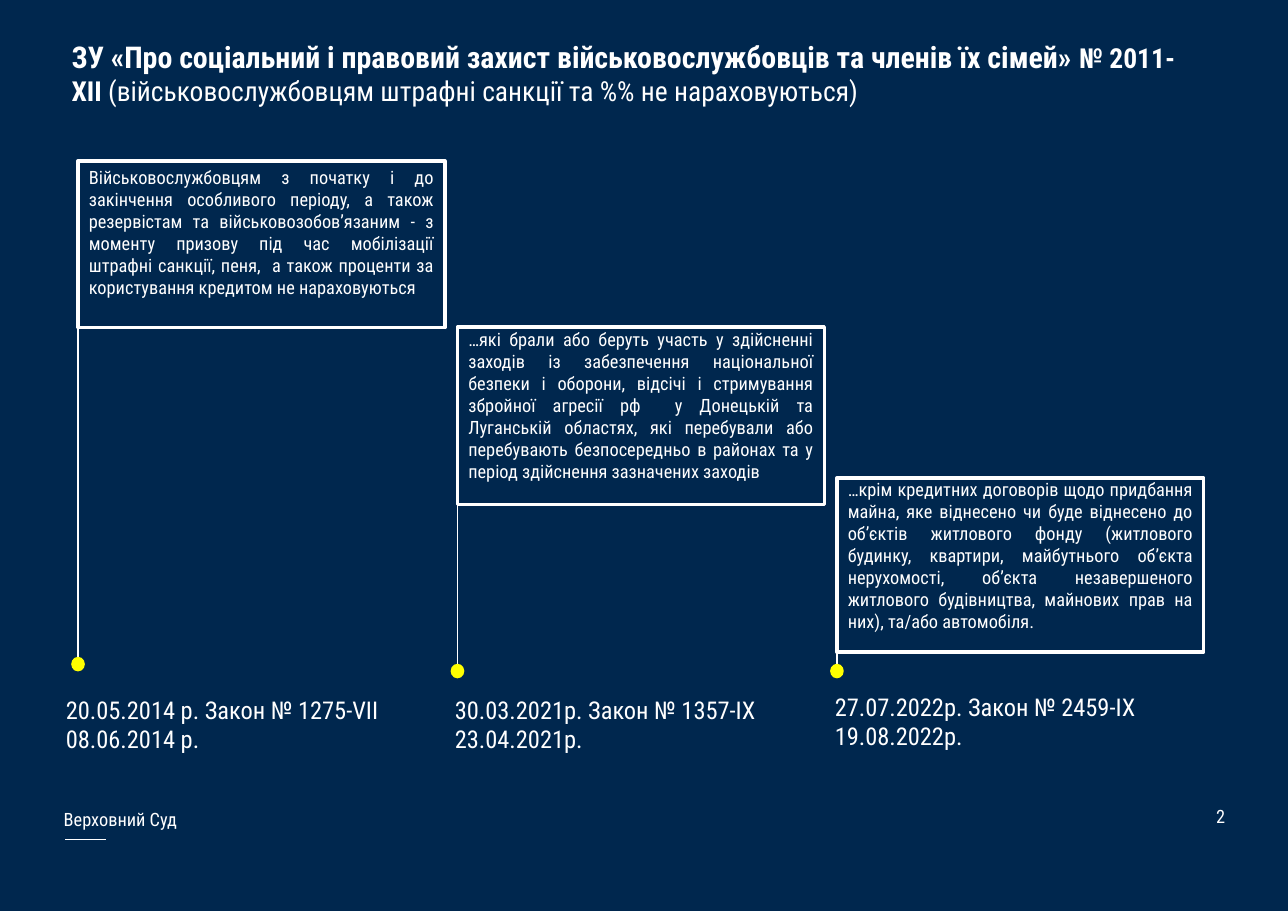
import dataclasses

import pptx
import pptx.util
import pptx.dml.color
import pptx.enum.shapes
import pptx.enum.text
from lxml import etree
from pptx.util import Cm, Pt

SHAPES = pptx.enum.shapes.MSO_SHAPE
ALIGN = pptx.enum.text.PP_ALIGN
ANCHOR = pptx.enum.text.MSO_ANCHOR


@dataclasses.dataclass(frozen=True)
class Theme:
    font: str = "Roboto Condensed"
    navy: str = "00274E"
    white: str = "FFFFFF"
    yellow: str = "FFFF00"
    title: float = 19.6
    title_number: float = 18
    date: float = 16
    body: float = 12


@dataclasses.dataclass(frozen=True)
class Stage:
    """One step of the timeline; lengths in centimetres."""
    top: float
    height: float
    inset_top: float
    dot_top: float
    label_offset: float
    label_top: float
    dates: tuple
    text: str


THEME = Theme()
BOX_LEFT, BOX_PITCH, BOX_WIDTH = 1.8, 8.75, 8.46
DOT_WIDTH, DOT_HEIGHT = 0.28, 0.3

TITLE = [
    ("ЗУ «Про соціальний і правовий захист військовослужбовців та членів їх сімей» ",
     THEME.title, True),
    ("№ 2011-XII ", THEME.title_number, True),
    ("(військовослужбовцям штрафні санкції та %% не нараховуються)",
     THEME.title_number, False),
]

STAGES = [
    Stage(3.71, 3.84, 0.12, 15.16, -0.53, 15.9,
          ("20.05.2014 р. Закон № 1275-VII", "08.06.2014 р."),
          "Військовослужбовцям з початку і до закінчення особливого періоду, "
          "а також резервістам та військовозобов’язаним - з моменту призову "
          "під час мобілізації штрафні санкції, пеня,  а також проценти за "
          "користування кредитом не нараховуються"),
    Stage(7.54, 4.09, 0.02, 15.32, -0.31, 15.9,
          ("30.03.2021р. Закон № 1357-IX", "23.04.2021р."),
          "…які брали або беруть участь у здійсненні заходів із забезпечення "
          "національної безпеки і оборони, відсічі і стримування збройної "
          "агресії рф  у Донецькій та Луганській областях, які перебували або "
          "перебувають безпосередньо в районах та у період здійснення "
          "зазначених заходів"),
    Stage(11.02, 4.01, 0, 15.32, -0.3, 15.82,
          ("27.07.2022р. Закон № 2459-IX", "19.08.2022р."),
          "…крім кредитних договорів щодо придбання майна, яке віднесено чи "
          "буде віднесено до об’єктів житлового фонду (житлового будинку, "
          "квартири, майбутнього об’єкта нерухомості, об’єкта незавершеного "
          "житлового будівництва, майнових прав на них), та/або автомобіля."),
]


def rgb(value):
    return pptx.dml.color.RGBColor.from_string(value)


def set_format(target, values):
    for name, value in values.items():
        setattr(target, name, value)


def write(shape, paragraphs, frame_format=None, paragraph_format=None):
    """Fill a shape with paragraphs, each a list of (text, size, bold) runs."""
    frame = shape.text_frame
    set_format(frame, {"word_wrap": True, "vertical_anchor": ANCHOR.TOP}
               | (frame_format or {}))
    for index, runs in enumerate(paragraphs):
        paragraph = frame.add_paragraph() if index else frame.paragraphs[0]
        set_format(paragraph, {"alignment": ALIGN.LEFT} | (paragraph_format or {}))
        for text, size, bold in runs:
            run = paragraph.add_run()
            run.text = text
            set_format(run.font, {"name": THEME.font, "size": Pt(size), "bold": bold})
            run.font.color.rgb = rgb(THEME.white)


def add_text(slide, bounds, paragraphs, frame_format=None, paragraph_format=None):
    box = slide.shapes.add_textbox(*map(Cm, bounds))
    write(box, paragraphs, frame_format, paragraph_format)


def add_figure(slide, kind, bounds, fill, line, line_width):
    shape = slide.shapes.add_shape(kind, *map(Cm, bounds))
    shape.shadow.inherit = False
    shape.fill.solid()
    shape.fill.fore_color.rgb = rgb(fill)
    shape.line.color.rgb = rgb(line)
    shape.line.width = Pt(line_width)
    return shape


def add_line(slide, ends, width):
    line = slide.shapes.add_connector(
        pptx.enum.shapes.MSO_CONNECTOR.STRAIGHT, *map(Cm, ends))
    line.line.color.rgb = rgb(THEME.white)
    line.line.width = Pt(width)
    etree.SubElement(line._element.spPr, pptx.oxml.ns.qn("a:effectLst"))


def add_stage(slide, stage, left):
    """Draw a text box, its stem, its dot and the dates below."""
    box = add_figure(slide, SHAPES.RECTANGLE,
                     (left, stage.top, BOX_WIDTH, stage.height),
                     THEME.navy, THEME.white, 2.25)
    write(box, [[(stage.text, THEME.body, False)]],
          {"margin_top": Cm(stage.inset_top), "margin_bottom": 0},
          {"alignment": ALIGN.JUSTIFY})
    add_line(slide, (left, stage.top + stage.height, left, stage.dot_top), 0.75)
    add_figure(slide, SHAPES.OVAL,
               (left - DOT_WIDTH / 2, stage.dot_top, DOT_WIDTH, DOT_HEIGHT),
               THEME.yellow, THEME.yellow, 1)
    add_text(slide, (left + stage.label_offset, stage.label_top, 7.92, 1.63),
             [[(date, THEME.date, False)] for date in stage.dates])


def add_footer(slide):
    middle = {"vertical_anchor": ANCHOR.MIDDLE}
    add_line(slide, (1.5, 19.35, 2.44, 19.35), 1.12)
    add_text(slide, (1.22, 18.29, 3.23, 1.12),
             [[("Верховний Суд", THEME.body, False)]], middle, {"line_spacing": 1.14})
    add_text(slide, (21.82, 18.26, 6.68, 1.12),
             [[("2", THEME.body, False)]], middle, {"alignment": ALIGN.RIGHT})


def main():
    presentation = pptx.Presentation()
    set_format(presentation, {"slide_width": Cm(29.7), "slide_height": Cm(21)})
    slide = presentation.slides.add_slide(presentation.slide_layouts[6])
    slide.background.fill.solid()
    slide.background.fill.fore_color.rgb = rgb(THEME.navy)

    add_footer(slide)
    for index, stage in enumerate(STAGES):
        add_stage(slide, stage, BOX_LEFT + index * BOX_PITCH)
    add_text(slide, (1.4, 0.76, 26.57, 1.93), [TITLE])
    presentation.save("out.pptx")


if __name__ == "__main__":
    main()
